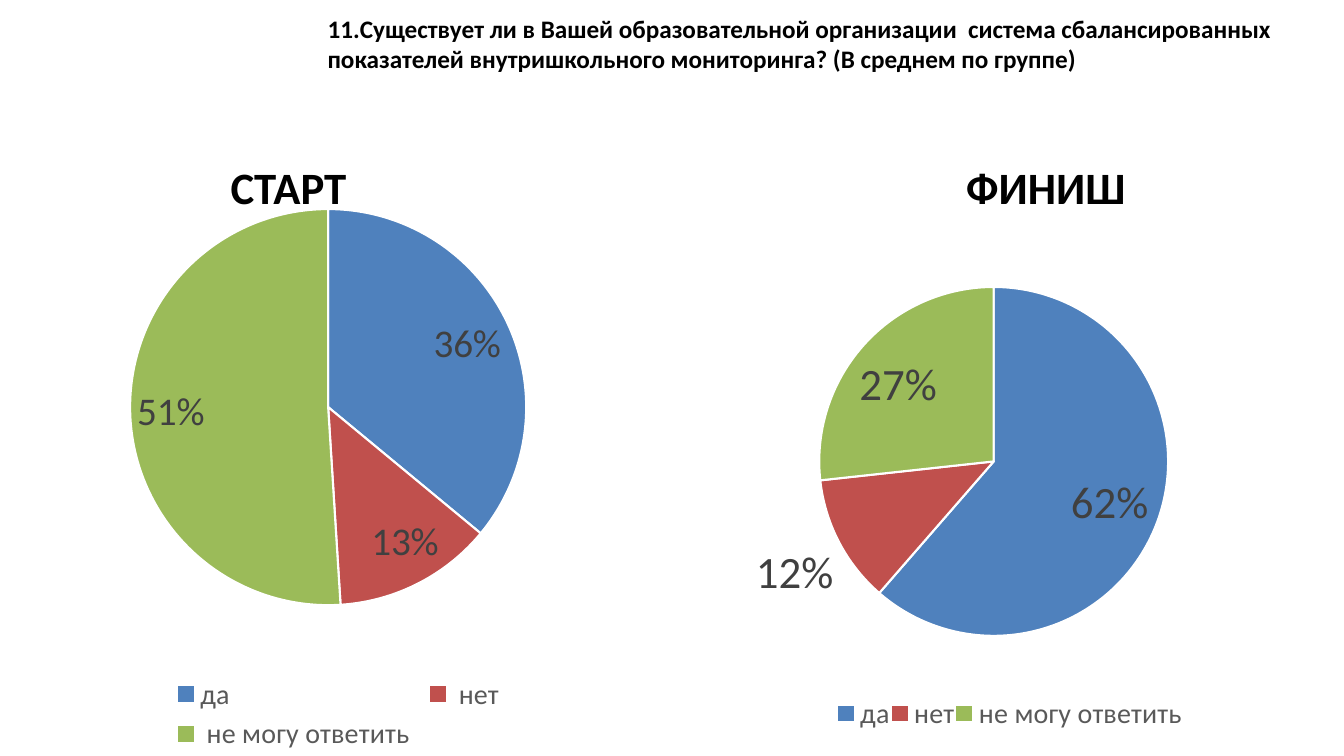
from lxml import etree
from pptx import Presentation
from pptx.chart.data import CategoryChartData
from pptx.dml.color import RGBColor
from pptx.enum.chart import XL_CHART_TYPE, XL_LABEL_POSITION, XL_LEGEND_POSITION
from pptx.enum.text import MSO_ANCHOR, MSO_AUTO_SIZE, PP_ALIGN
from pptx.oxml import parse_xml
from pptx.oxml.ns import nsdecls
from pptx.util import Cm, Pt

BLACK = RGBColor(0x00, 0x00, 0x00)
WHITE = RGBColor(0xFF, 0xFF, 0xFF)
LEGEND_GREY = RGBColor(0x59, 0x59, 0x59)
LABEL_GREY = RGBColor(0x40, 0x40, 0x40)
SLICE_COLOURS = [
    RGBColor(0x4F, 0x81, 0xBD),
    RGBColor(0xC0, 0x50, 0x4D),
    RGBColor(0x9B, 0xBB, 0x59),
]

QUESTION = (
    "11.Существует ли в Вашей образовательной организации  система сбалансированных "
    "показателей внутришкольного мониторинга? (В среднем по группе)"
)
QUESTION_BOX = (8, 0.2, 25.2, 3.3)

# Boxes are left, top, width, height in cm; plot and legend are shares of the chart.
SURVEYS = [
    {
        "heading": "СТАРТ",
        "heading_box": (5.56, 3.91, 4.57, 1.6),
        "chart_box": (-0.03, 4.93, 16.94, 14.12),
        "answers": {"да": 36, " нет": 13, " не могу ответить": 51},
        "label_size": 28,
        "plot": (0.195, 0.024, 0.59, 0.707),
        "legend": (0.25, 0.85, 0.51, 0.15),
    },
    {
        "heading": "ФИНИШ",
        "heading_box": (24.1, 3.91, 5.84, 1.6),
        "chart_box": (16.33, 6.12, 17.53, 12.93),
        "answers": {"да": 62, "нет": 12, "не могу ответить": 27},
        "label_size": 32,
        "plot": (0.246, 0.086, 0.502, 0.68),
        "legend": (0.27, 0.835, 0.5, 0.165),
    },
]


def set_font(font, size, colour, bold=False):
    font.color.rgb = colour
    for name, value in {"name": "Calibri", "size": Pt(size), "bold": bold}.items():
        setattr(font, name, value)


def make_layout(shares, inner=False):
    """Return a c:layout element that fixes a chart part at the given shares."""
    layout = parse_xml(f"<c:layout {nsdecls('c')}><c:manualLayout/></c:layout>")
    settings = [("layoutTarget", "inner")] if inner else []
    settings += [("xMode", "edge"), ("yMode", "edge")]
    settings += zip("xywh", shares)
    namespace = layout.nsmap["c"]
    for name, value in settings:
        etree.SubElement(layout[0], f"{{{namespace}}}{name}").set("val", str(value))
    return layout


def replace_layout(part, layout, position):
    for old in part.findall(f"{{{part.nsmap['c']}}}layout"):
        part.remove(old)
    part.insert(position, layout)


def add_heading(page, text, box):
    heading = page.shapes.add_textbox(*map(Cm, box))
    frame = heading.text_frame
    frame.word_wrap = False
    para = frame.paragraphs[0]
    para.text = text
    set_font(para.runs[0].font, 32, BLACK, bold=True)


def add_pie(page, survey):
    data = CategoryChartData()
    data.categories = list(survey["answers"])
    data.add_series("Series 1", list(survey["answers"].values()))
    chart = page.shapes.add_chart(
        XL_CHART_TYPE.PIE, *map(Cm, survey["chart_box"]), data
    ).chart
    set_font(chart.font, 10, BLACK)
    chart.font.name = "Arial"
    chart.has_title = False

    chart.has_legend = True
    legend = chart.legend
    legend.position = XL_LEGEND_POSITION.BOTTOM
    legend.include_in_layout = False
    set_font(legend.font, 20, LEGEND_GREY)

    plot = chart.plots[0]
    plot.vary_by_categories = True
    series = plot.series[0]
    for index, colour in enumerate(SLICE_COLOURS):
        slice_format = series.points[index].format
        slice_format.fill.solid()
        slice_format.fill.fore_color.rgb = colour
        slice_format.line.color.rgb = WHITE
        slice_format.line.width = Pt(1.5)

    labels = series.data_labels
    label_values = {
        "show_value": True,
        "number_format": '0"%"',
        "number_format_is_linked": False,
        "position": XL_LABEL_POSITION.BEST_FIT,
    }
    for name, value in label_values.items():
        setattr(labels, name, value)
    set_font(labels.font, survey["label_size"], LABEL_GREY)

    plot_area = chart.element.chart.plotArea
    replace_layout(plot_area, make_layout(survey["plot"], inner=True), 0)
    replace_layout(chart.element.chart.find(f"{{{plot_area.nsmap['c']}}}legend"),
                   make_layout(survey["legend"]), 1)


def main():
    deck = Presentation()
    deck.slide_width, deck.slide_height = Cm(33.87), Cm(19.05)
    page = deck.slides.add_slide(deck.slide_layouts[5])

    title = page.shapes.title
    title.left, title.top, title.width, title.height = map(Cm, QUESTION_BOX)
    frame = title.text_frame
    frame.text = QUESTION
    frame.word_wrap = True
    frame.auto_size = MSO_AUTO_SIZE.NONE
    frame.vertical_anchor = MSO_ANCHOR.TOP
    para = frame.paragraphs[0]
    para.alignment = PP_ALIGN.LEFT
    set_font(para.runs[0].font, 18, BLACK, bold=True)

    for survey in SURVEYS:
        add_pie(page, survey)
        add_heading(page, survey["heading"], survey["heading_box"])
    deck.save("out.pptx")


if __name__ == "__main__":
    main()
